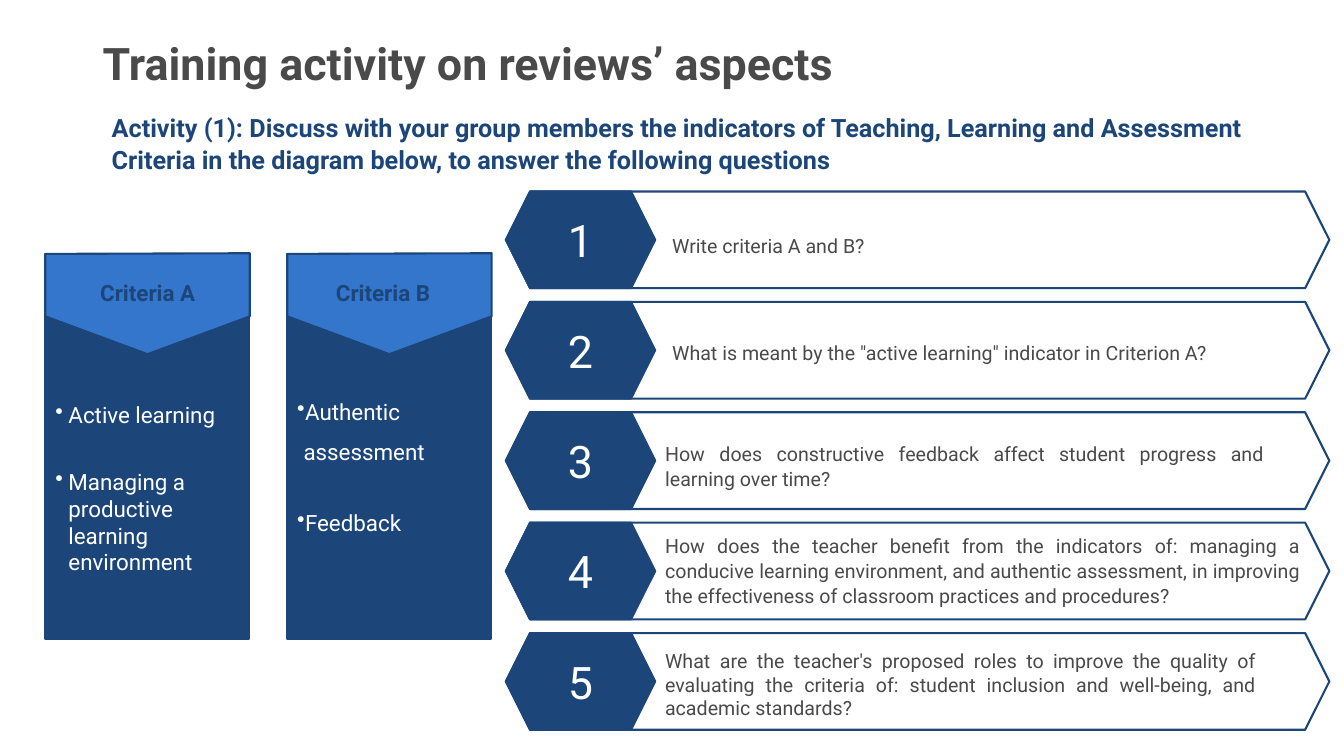
from dataclasses import dataclass

import pptx
import pptx.dml.color
import pptx.enum.shapes
import pptx.enum.text
import pptx.oxml
import pptx.oxml.ns
import pptx.util

Pt = pptx.util.Pt
Align = pptx.enum.text.PP_ALIGN
Anchor = pptx.enum.text.MSO_ANCHOR
Kind = pptx.enum.shapes.MSO_SHAPE

COLORS = {"navy": "1C4679", "blue": "3376CC", "gray": "4A4A4A", "white": "FFFFFF"}
FONT = "Roboto"


@dataclass
class Column:
    """A criteria panel: lead is the line pitch, gap the space between items."""
    label: str
    items: list[str]
    left: float
    tag_left: float
    tag_width: float
    inset: float
    lead: float
    gap: float
    indent: float


@dataclass
class Question:
    text: str
    left: float
    top: float
    width: float
    height: float
    spacing: float = 1.07


COLUMNS = [
    Column("Criteria A", ["Active learning", "Managing a productive learning environment"],
           32.4, 53.3, 104.4, 105, 19.2, 28.7, 9.4),
    Column("Criteria B", ["Authentic assessment", "Feedback"],
           205.2, 215.3, 116.6, 93.5, 28.8, 21.4, 4.5),
]
QUESTIONS = [
    Question("Write criteria A and B?", 473, 162.7, 237.6, 25.2),
    Question('What is meant by the "active learning" indicator in Criterion A?',
             473, 239, 447.1, 23.8),
    Question("How does constructive feedback affect student progress and learning over time?",
             468, 311, 442.1, 43.9),
    Question("How does the teacher benefit from the indicators of: managing a conducive "
             "learning environment, and authentic assessment, in improving the "
             "effectiveness of classroom practices and procedures?",
             468, 376.6, 468, 61.9),
    Question("What are the teacher's proposed roles to improve the quality of evaluating "
             "the criteria of: student inclusion and well-being, and academic standards?",
             468, 460.1, 436.3, 58.3, 1.0),
]
PANEL_TOP, PANEL_WIDTH, PANEL_HEIGHT = 181.4, 145.4, 275
HEX_LEFT, HEX_TOP, HEX_PITCH, HEX_HEIGHT = 361.4, 136.8, 78.85, 69.1


def color(name: str) -> pptx.dml.color.RGBColor:
    return pptx.dml.color.RGBColor.from_string(COLORS[name])


def write(frame, text: str, *, size: float = 16, tint: str = "white", bold: bool = False,
          align=Align.LEFT, anchor=Anchor.TOP, spacing=1.0, before: float = 0,
          bullet: float = 0) -> None:
    """Add one paragraph; bullet is the hanging indent, 0 for none."""
    frame.word_wrap = True
    frame.vertical_anchor = anchor
    para = frame.paragraphs[0] if not frame.text else frame.add_paragraph()
    if bullet:
        props = para._p.get_or_add_pPr()
        props.set("marL", str(Pt(bullet)))
        props.set("indent", str(-Pt(bullet)))
        mark = pptx.oxml.parse_xml(
            f'<a:buChar {pptx.oxml.ns.nsdecls("a")} char="•"/>')
        props.append(mark)
    para.alignment = align
    para.line_spacing = spacing
    if before:
        para.space_before = Pt(before)
    run = para.add_run()
    run.text = text
    run.font.name = FONT
    run.font.size = Pt(size)
    run.font.bold = bold
    run.font.color.rgb = color(tint)


def paint(shape, fill: str) -> None:
    shape.shadow.inherit = False
    shape.fill.solid()
    shape.fill.fore_color.rgb = color(fill)
    shape.line.color.rgb = color("navy")
    shape.line.width = Pt(1.5)


def block(slide, kind, left: float, top: float, width: float, height: float, fill: str):
    shape = slide.shapes.add_shape(kind, Pt(left), Pt(top), Pt(width), Pt(height))
    paint(shape, fill)
    return shape


def label(slide, text: str, left: float, top: float, width: float, height: float,
          **style) -> None:
    box = slide.shapes.add_textbox(Pt(left), Pt(top), Pt(width), Pt(height))
    write(box.text_frame, text, **style)


def draw_column(slide, col: Column) -> None:
    panel = block(slide, Kind.RECTANGLE, col.left, PANEL_TOP, PANEL_WIDTH, PANEL_HEIGHT,
                  "navy")
    frame = panel.text_frame
    frame.margin_top = Pt(col.inset)
    for index, item in enumerate(col.items):
        write(frame, item, spacing=Pt(col.lead), before=col.gap if index else 0,
              bullet=col.indent)

    right = col.left + 146
    outline = [(col.left + 73, 253), (right, 226), (right, 180.9), (col.left, PANEL_TOP)]
    pen = slide.shapes.build_freeform(Pt(col.left), Pt(226))
    pen.add_line_segments([(Pt(x), Pt(y)) for x, y in outline], close=True)
    paint(pen.convert_to_shape(), "blue")
    label(slide, col.label, col.tag_left, 195.8, col.tag_width, 26.6,
          tint="navy", bold=True, align=Align.CENTER)


def draw_row(slide, index: int, ask: Question) -> None:
    top = HEX_TOP + index * HEX_PITCH
    block(slide, Kind.HEXAGON, HEX_LEFT, top, 588.2, HEX_HEIGHT, "white")
    badge = block(slide, Kind.HEXAGON, HEX_LEFT, top, 106.6, HEX_HEIGHT, "navy")
    write(badge.text_frame, str(index + 1), size=32, align=Align.CENTER,
          anchor=Anchor.MIDDLE)
    label(slide, ask.text, ask.left, ask.top, ask.width, ask.height, size=14,
          tint="gray", align=Align.JUSTIFY, spacing=ask.spacing)


def main() -> None:
    deck = pptx.Presentation()
    deck.slide_width, deck.slide_height = Pt(960), Pt(540)
    slide = deck.slides.add_slide(deck.slide_layouts[6])
    label(slide, "Training activity on reviews’ aspects", 66.2, 18, 802.8, 58.3,
          size=32, tint="gray", bold=True, anchor=Anchor.MIDDLE, spacing=0.9)
    label(slide, "Activity (1): Discuss with your group members the indicators of Teaching, "
          "Learning and Assessment Criteria in the diagram below, to answer the following "
          "questions", 72.7, 74.9, 831.6, 54, size=18, tint="navy", bold=True, spacing=1.07)
    for col in COLUMNS:
        draw_column(slide, col)
    for index, ask in enumerate(QUESTIONS):
        draw_row(slide, index, ask)
    deck.save("out.pptx")


if __name__ == "__main__":
    main()
